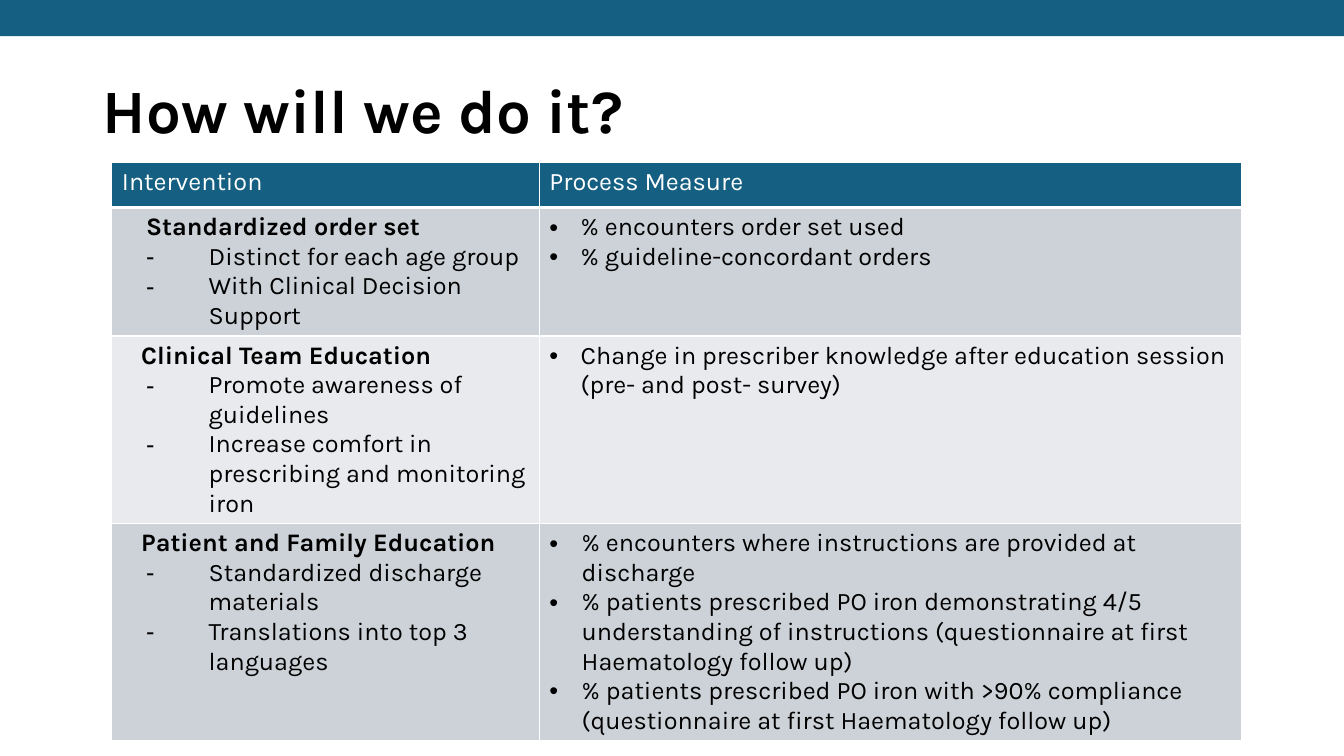
from lxml import etree
from pptx import Presentation, util as u
from pptx.dml.color import RGBColor
from pptx.enum import shapes, text
from pptx.oxml.ns import qn

PX = 9144
FONT = "Karla"
TEAL, WHITE, BLACK = "156082", "FFFFFF", "000000"
BANDS = ["CCD2D8", "E8EAED"]
COLUMNS = [424, 696]
ROWS = [45, 125, 183, 206]
HEADINGS = ["Intervention", "Process Measure"]
PLAN = [
    ("Standardized order set", 24,
     ["Distinct for each age group", "With Clinical Decision Support"], 31,
     ["% encounters order set used", "% guideline-concordant orders"]),
    ("Clinical Team Education", 19,
     ["Promote awareness of guidelines",
      "Increase comfort in prescribing and monitoring iron"], 31,
     ["Change in prescriber knowledge after education session (pre- and post- survey)"]),
    ("Patient and Family Education", 19,
     ["Standardized discharge materials", "Translations into top 3 languages"], 32,
     ["% encounters where instructions are provided at discharge",
      "% patients prescribed PO iron demonstrating 4/5 understanding of instructions "
      "(questionnaire at first Haematology follow up)",
      "% patients prescribed PO iron with >90% compliance "
      "(questionnaire at first Haematology follow up)"]),
]


def px(*lengths):
    """Turn pixel lengths into EMU."""
    return [u.Emu(length * PX) for length in lengths]


def colour(value):
    """Turn a hex string into a colour."""
    return RGBColor.from_string(value)


def set_font(font, size=18, fill=BLACK, bold=False):
    """Apply the deck's font with the given look."""
    for name, value in {"name": FONT, "size": u.Pt(size), "bold": bold}.items():
        setattr(font, name, value)
    font.color.rgb = colour(fill)


def add_bar(page, box):
    """Draw the band across the top."""
    bar = page.shapes.add_shape(shapes.MSO_SHAPE.RECTANGLE, *px(*box))
    bar.shadow.inherit = False
    bar.fill.solid()
    bar.fill.fore_color.rgb = colour(TEAL)
    bar.line.fill.background()


def add_title(page, box, words):
    """Place and format the title placeholder."""
    title = page.shapes.title
    for name, value in zip(["left", "top", "width", "height"], px(*box)):
        setattr(title, name, value)
    frame = title.text_frame
    frame.vertical_anchor = text.MSO_ANCHOR.MIDDLE
    para = frame.paragraphs[0]
    para.alignment = text.PP_ALIGN.LEFT
    para.line_spacing = 0.9
    span = para.add_run()
    span.text = words
    set_font(span.font, 44, bold=True)


def paint_cell(cell, fill, bottom=1):
    """Give a cell white borders and a solid fill."""
    props = cell._tc.get_or_add_tcPr()
    for side, width in {"L": 1, "R": 1, "T": 1, "B": bottom}.items():
        line = etree.SubElement(props, qn(f"a:ln{side}"), w=str(u.Pt(width)))
        solid = etree.SubElement(line, qn("a:solidFill"))
        etree.SubElement(solid, qn("a:srgbClr"), val=WHITE)
    cell.fill.solid()
    cell.fill.fore_color.rgb = colour(fill)


def write_cell(cell, lines, fill=BLACK):
    """Write lines of (words, bullet, left, hanging, bold) into a cell."""
    frame = cell.text_frame
    for index, (words, bullet, left, hanging, bold) in enumerate(lines):
        para = frame.add_paragraph() if index else frame.paragraphs[0]
        props = para._p.get_or_add_pPr()
        for name, value in {"marL": left, "indent": -hanging}.items():
            props.set(name, str(value * PX))
        if bullet:
            etree.SubElement(props, qn("a:buFont"), typeface="Arial")
            etree.SubElement(props, qn("a:buChar"), char=bullet)
        span = para.add_run()
        span.text = words
        set_font(span.font, fill=fill, bold=bold)


def add_plan(page, box):
    """Build the table of interventions and process measures."""
    table = page.shapes.add_table(len(ROWS), len(COLUMNS), *px(*box)).table
    table.horz_banding = False
    for column, width in zip(table.columns, px(*COLUMNS)):
        column.width = width
    for row, height in zip(table.rows, px(*ROWS)):
        row.height = height
    for index, heading in enumerate(HEADINGS):
        cell = table.cell(0, index)
        paint_cell(cell, TEAL, bottom=3)
        write_cell(cell, [(heading, None, 0, 0, False)], WHITE)
    for row, (name, left, steps, hang, measures) in enumerate(PLAN, 1):
        columns = [
            [(name, None, left, 0, True)] + [(step, "-", 86, 62, False) for step in steps],
            [(measure, "•", hang, hang, False) for measure in measures],
        ]
        for index, lines in enumerate(columns):
            cell = table.cell(row, index)
            paint_cell(cell, BANDS[(row - 1) % 2])
            write_cell(cell, lines)


def main():
    """Build and save the deck."""
    deck = Presentation()
    deck.slide_width, deck.slide_height = px(1333, 750)
    page = deck.slides.add_slide(deck.slide_layouts[5])
    add_title(page, (92, 40, 1150, 145), "How will we do it?")
    add_plan(page, (111, 161, sum(COLUMNS), sum(ROWS)))
    add_bar(page, (0, 0, 1333, 36))
    deck.save("out.pptx")


if __name__ == "__main__":
    main()
